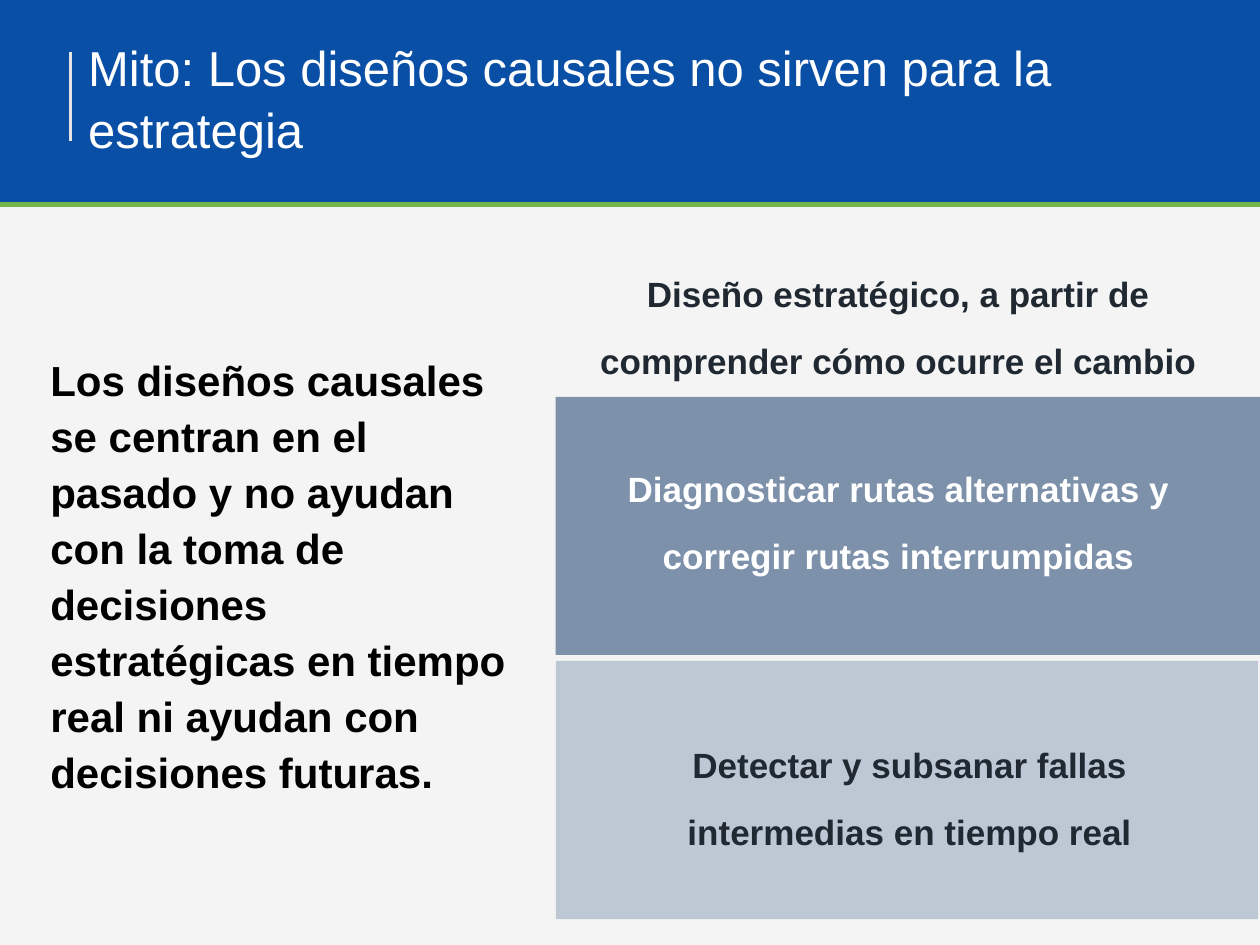
from typing import NamedTuple

from lxml.etree import SubElement
from pptx import Presentation
from pptx.dml.color import RGBColor
from pptx.enum.shapes import MSO_CONNECTOR, MSO_SHAPE
from pptx.enum.text import MSO_ANCHOR, PP_ALIGN
from pptx.oxml.ns import qn
from pptx.util import Pt

WIDE, HIGH = 720, 540
BLUE, GREEN, WHITE, BLACK = "0A4FA6", "73B54B", "FFFFFF", "000000"
PALE, RULE, DARK = "F4F4F4", "E5E5E5", "202832"
STEEL, MIST = "7D91AB", "BEC8D5"
SIDE = 317.6


class Box(NamedTuple):
    left: float
    top: float
    width: float
    height: float


class Claim(NamedTuple):
    text: str
    box: Box
    color: str


CLAIMS = [
    Claim("Diseño estratégico, a partir de comprender cómo ocurre el cambio",
          Box(335.5, 141.8, 355.7, 72), DARK),
    Claim("Diagnosticar rutas alternativas y corregir rutas interrumpidas",
          Box(344.9, 253.4, 337, 72), WHITE),
    Claim("Detectar y subsanar fallas intermedias en tiempo real",
          Box(344.9, 411.1, 349.9, 72), DARK),
]


def paint(color: str) -> RGBColor:
    return RGBColor.from_string(color)


def add_block(slide, box: Box, color: str) -> None:
    block = slide.shapes.add_shape(MSO_SHAPE.RECTANGLE, *map(Pt, box))
    block.shadow.inherit = False
    block.fill.solid()
    block.fill.fore_color.rgb = paint(color)
    block.line.fill.background()


def add_line(slide, start: tuple[float, float], end: tuple[float, float],
             color: str, weight: float) -> None:
    line = slide.shapes.add_connector(
        MSO_CONNECTOR.STRAIGHT, *map(Pt, (*start, *end)))
    line.line.color.rgb = paint(color)
    line.line.width = Pt(weight)
    SubElement(line._element.spPr, qn("a:effectLst"))


def add_text(slide, text: str, box: Box, *, size: float, color: str,
             spacing: float, bold: bool = False, inset: float = 0,
             align: PP_ALIGN = PP_ALIGN.LEFT,
             anchor: MSO_ANCHOR = MSO_ANCHOR.TOP) -> None:
    """Add wrapped Arial text; spacing is a length or a multiple of a line."""
    frame = slide.shapes.add_textbox(*map(Pt, box)).text_frame
    frame.word_wrap = True
    frame.vertical_anchor = anchor
    frame.margin_left = frame.margin_right = Pt(inset)
    frame.margin_top = frame.margin_bottom = Pt(inset)
    para = frame.paragraphs[0]
    para.alignment = align
    para.line_spacing = spacing
    run = para.add_run()
    run.text = text
    run.font.name = "Arial"
    run.font.size = Pt(size)
    run.font.bold = bold
    run.font.color.rgb = paint(color)


def add_head(slide) -> None:
    add_block(slide, Box(0, 0, WIDE, 117), BLUE)
    add_line(slide, (0, 116.8), (WIDE, 116.8), GREEN, 3)
    add_text(slide, "Mito: Los diseños causales no sirven para la estrategia",
             Box(46.8, 32.4, 661, 45.4), size=28, color=WHITE, spacing=1.05,
             inset=3.6, anchor=MSO_ANCHOR.MIDDLE)
    add_line(slide, (40.4, 29.8), (40.4, 80.5), RULE, 2)


def main() -> None:
    deck = Presentation()
    deck.slide_width, deck.slide_height = Pt(WIDE), Pt(HIGH)
    slide = deck.slides.add_slide(deck.slide_layouts[6])
    slide.background.fill.solid()
    slide.background.fill.fore_color.rgb = paint(PALE)

    add_head(slide)
    add_block(slide, Box(SIDE, 226.8, WIDE - SIDE, 147.5), STEEL)
    add_block(slide, Box(SIDE, 377.7, 401.2, 147.5), MIST)
    add_text(slide, "Los diseños causales se centran en el pasado y no ayudan "
             "con la toma de decisiones estratégicas en tiempo real ni ayudan "
             "con decisiones futuras.", Box(28.8, 199.4, 269.3, 224),
             size=24, color=BLACK, spacing=Pt(32), bold=True)
    for claim in CLAIMS:
        add_text(slide, claim.text, claim.box, size=20, color=claim.color,
                 spacing=Pt(38), bold=True, align=PP_ALIGN.CENTER)
    deck.save("out.pptx")


if __name__ == "__main__":
    main()
